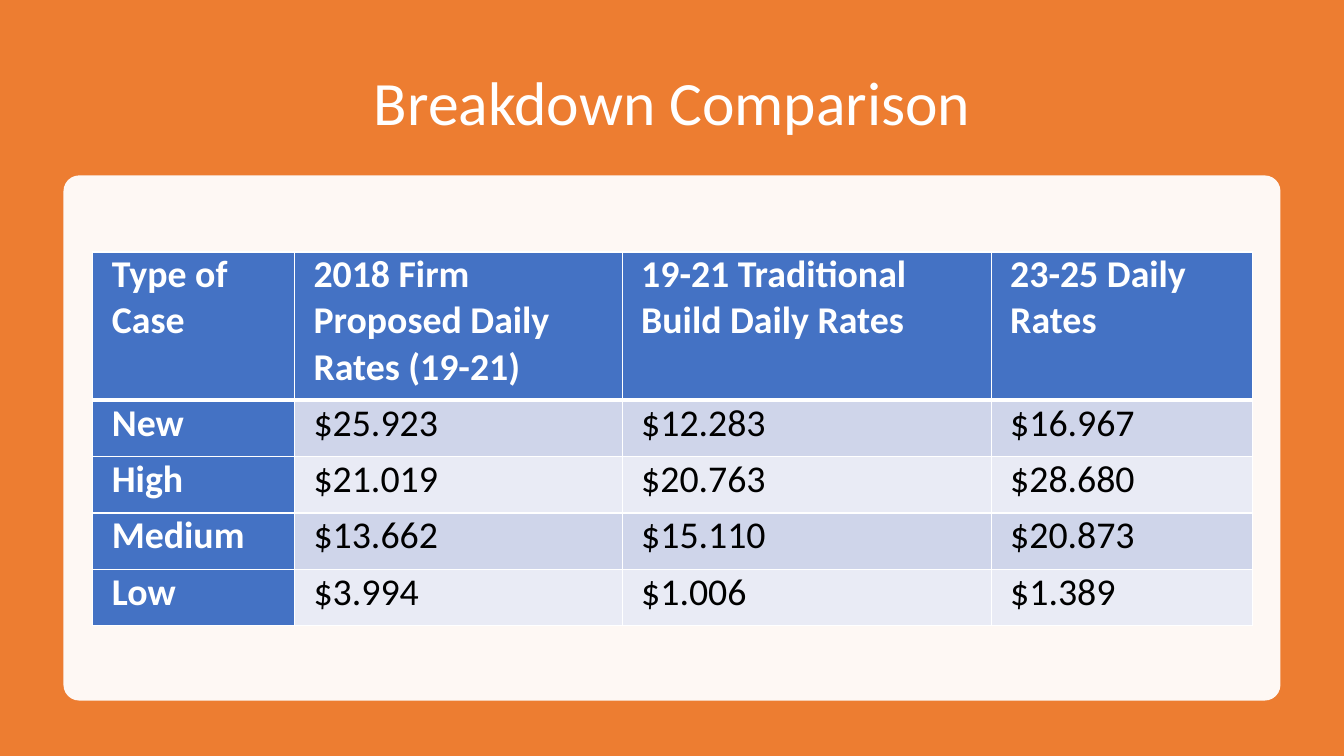
"""Build the Breakdown Comparison slide with its table of daily rates."""
from dataclasses import dataclass

from lxml import etree
from pptx import Presentation
from pptx.dml.color import RGBColor
from pptx.enum.shapes import MSO_SHAPE
from pptx.enum.text import MSO_ANCHOR, PP_ALIGN
from pptx.oxml.ns import qn
from pptx.shapes.autoshape import Shape
from pptx.slide import Slide
from pptx.table import _Cell
from pptx.text.text import TextFrame
from pptx.util import Inches, Pt

RECT = MSO_SHAPE.RECTANGLE
ROUND = MSO_SHAPE.ROUNDED_RECTANGLE
CENTER = PP_ALIGN.CENTER
LEFT = PP_ALIGN.LEFT
MIDDLE = MSO_ANCHOR.MIDDLE
TOP = MSO_ANCHOR.TOP

FONT = "Calibri"
ORANGE = RGBColor(0xED, 0x7D, 0x31)
WHITE = RGBColor(0xFF, 0xFF, 0xFF)
BLACK = RGBColor(0, 0, 0)
BLUE = RGBColor(0x44, 0x72, 0xC4)
BANDS = (RGBColor(0xCF, 0xD5, 0xEA), RGBColor(0xE9, 0xEB, 0xF5))

WIDTH, HEIGHT = 13.33, 7.5
HEAD_ROW, BODY_ROW = 1.47, 0.56


@dataclass(frozen=True)
class Column:
    """A table column: its width, heading and body values."""
    width: float
    head: str
    values: tuple[str, ...]


@dataclass(frozen=True)
class Box:
    """A place on the slide, in inches."""
    left: float
    top: float
    width: float
    height: float


COLUMNS = (
    Column(2, "Type of Case", ("New", "High", "Medium", "Low")),
    Column(3.25, "2018 Firm Proposed Daily Rates (19-21)",
           ("$25.923", "$21.019", "$13.662", "$3.994")),
    Column(3.66, "19-21 Traditional Build Daily Rates",
           ("$12.283", "$20.763", "$15.110", "$1.006")),
    Column(2.59, "23-25 Daily Rates",
           ("$16.967", "$28.680", "$20.873", "$1.389")),
)


def write(frame: TextFrame, text: str, size: float, color: RGBColor,
          bold: bool, align: PP_ALIGN) -> None:
    """Set the text of a frame and format it."""
    frame.text = text
    para = frame.paragraphs[0]
    para.alignment = align
    font = para.runs[0].font
    font.name, font.size, font.bold = FONT, Pt(size), bold
    font.color.rgb = color


def add_panel(slide: Slide, kind: MSO_SHAPE, box: Box, color: RGBColor) -> Shape:
    """Add a plain filled shape."""
    panel = slide.shapes.add_shape(kind, Inches(box.left), Inches(box.top),
                                   Inches(box.width), Inches(box.height))
    panel.shadow.inherit = False
    panel.fill.solid()
    panel.fill.fore_color.rgb = color
    panel.line.fill.background()
    return panel


def set_title(slide: Slide, text: str, box: Box) -> None:
    """Place and format the title."""
    title = slide.shapes.title
    title.left, title.top = Inches(box.left), Inches(box.top)
    title.width, title.height = Inches(box.width), Inches(box.height)
    frame = title.text_frame
    frame.vertical_anchor = MIDDLE
    write(frame, text, 44, WHITE, False, CENTER)
    frame.paragraphs[0].line_spacing = 0.9


def add_edge(cell: _Cell, side: str, width: float) -> None:
    """Draw one white cell border."""
    props = cell._tc.get_or_add_tcPr()
    line = etree.SubElement(props, qn(f"a:ln{side}"), w=str(Pt(width)))
    fill = etree.SubElement(line, qn("a:solidFill"))
    etree.SubElement(fill, qn("a:srgbClr"), val=str(WHITE))


def style_cell(cell: _Cell, text: str, row: int, col: int) -> None:
    """Fill, border and write one table cell."""
    cell.margin_left = cell.margin_right = Inches(0.19)
    cell.margin_top = cell.margin_bottom = 0
    cell.vertical_anchor = TOP
    edges = {"L": 1, "R": 1, "T": 3 if row == 1 else 1, "B": 3 if row == 0 else 1}
    for side, width in edges.items():
        add_edge(cell, side, width)
    strong = row == 0 or col == 0
    cell.fill.solid()
    cell.fill.fore_color.rgb = BLUE if strong else BANDS[(row - 1) % 2]
    write(cell.text_frame, text, 27, WHITE if strong else BLACK, strong, LEFT)


def add_rates(slide: Slide, left: float, top: float) -> None:
    """Add the table of rates."""
    count = len(COLUMNS[0].values)
    width = sum(col.width for col in COLUMNS)
    height = HEAD_ROW + count * BODY_ROW
    table = slide.shapes.add_table(count + 1, len(COLUMNS), Inches(left), Inches(top),
                                   Inches(width), Inches(height)).table
    table.first_col = True
    for row, line in enumerate(table.rows):
        line.height = Inches(BODY_ROW if row else HEAD_ROW)
    for col, column in enumerate(COLUMNS):
        table.columns[col].width = Inches(column.width)
        for row, text in enumerate((column.head, *column.values)):
            style_cell(table.cell(row, col), text, row, col)


def main() -> None:
    """Build and save the slide."""
    deck = Presentation()
    deck.slide_width, deck.slide_height = Inches(WIDTH), Inches(HEIGHT)
    slide = deck.slides.add_slide(deck.slide_layouts[5])
    back = add_panel(slide, RECT, Box(0, 0, WIDTH, HEIGHT), ORANGE)
    slide.shapes.title.element.addprevious(back.element)
    set_title(slide, "Breakdown Comparison", Box(0.92, 0.5, 11.5, 1.1))
    card = add_panel(slide, ROUND, Box(0.63, 1.74, 12.07, 5.21), WHITE)
    card.adjustments[0] = 0.03
    tint = card.element.spPr.find(qn("a:solidFill"))[0]
    etree.SubElement(tint, qn("a:alpha"), val="95000")
    add_rates(slide, 0.92, 2.5)
    deck.save("out.pptx")


if __name__ == "__main__":
    main()
